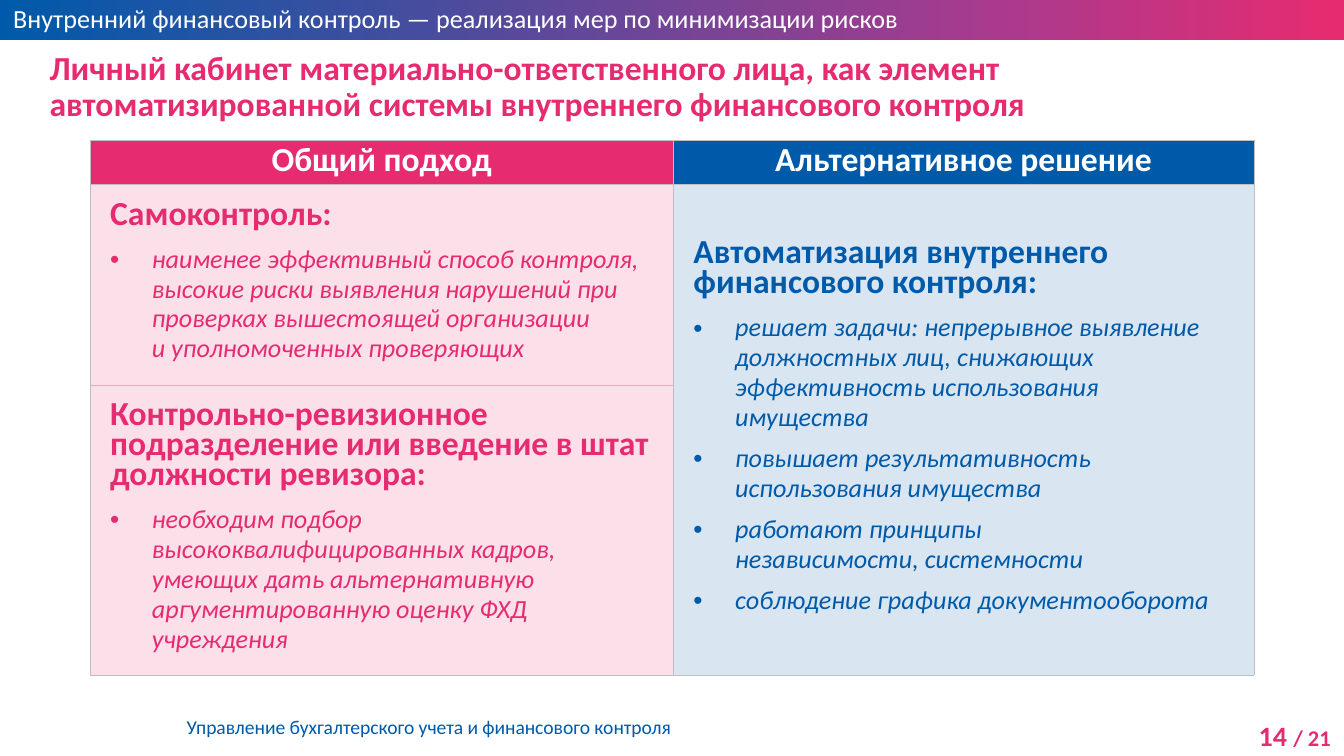
import copy

import lxml.etree
import pptx
import pptx.dml.color
import pptx.enum.shapes
import pptx.enum.text
import pptx.oxml
import pptx.oxml.ns
import pptx.util

Inches = pptx.util.Inches
Pt = pptx.util.Pt
qn = pptx.oxml.ns.qn
ALIGN = pptx.enum.text.PP_ALIGN
PINK, BLUE, WHITE, GREY = "E72B70", "005AAA", "FFFFFF", "BFBFBF"


def color(value):
    return pptx.dml.color.RGBColor.from_string(value)


def format_runs(paragraph, size, value, bold=False, italic=False):
    for run in paragraph.runs:
        run.font.name = "Calibri"
        run.font.size = Pt(size)
        run.font.bold = bold
        run.font.italic = italic
        run.font.color.rgb = color(value)


presentation = pptx.Presentation()
presentation.slide_width = Inches(10)
presentation.slide_height = Inches(10) * 9 // 16
slide = presentation.slides.add_slide(presentation.slide_layouts[6])

# Header band
band = slide.shapes.add_shape(
    pptx.enum.shapes.MSO_SHAPE.RECTANGLE, 0, 0, Inches(10), Inches(0.3))
band.shadow.inherit = False
band.line.fill.background()
band.fill.gradient()
band.fill.gradient_angle = 0
stop_list = band._element.spPr.find(".//" + qn("a:gsLst"))
stop_list.append(copy.deepcopy(stop_list[-1]))
for stop, (position, value) in zip(
        band.fill.gradient_stops, [(0, BLUE), (0.75, "AB3A8D"), (1, PINK)]):
    stop.position = position
    stop.color.rgb = color(value)

# Page number
page_box = slide.shapes.add_textbox(Inches(9.1), Inches(5.3), Inches(0.9), Inches(0.35))
page_box.text_frame.word_wrap = True
paragraph = page_box.text_frame.paragraphs[0]
paragraph.alignment = ALIGN.RIGHT
for text in ("14 ", "/ 21"):
    paragraph.add_run().text = text
format_runs(paragraph, 12, PINK, bold=True)
paragraph.runs[0].font.size = Pt(15)

# Text boxes: left, top, width, height, text, size, color, bold, wrap
text_boxes = [
    (1.29, 5.27, 3.84, 0.28, "Управление бухгалтерского учета и финансового контроля",
     10.5, BLUE, False, False),
    (0, -0.03, 10, 0.34,
     "Внутренний финансовый контроль — реализация мер по минимизации рисков",
     14, WHITE, False, True),
    (0.27, 0.33, 9.45, 0.71,
     "Личный кабинет материально-ответственного лица, как элемент "
     "автоматизированной системы внутреннего финансового контроля",
     18, PINK, True, True),
]
for left, top, width, height, text, size, value, bold, wrap in text_boxes:
    text_box = slide.shapes.add_textbox(
        Inches(left), Inches(top), Inches(width), Inches(height))
    text_box.text_frame.word_wrap = wrap
    text_box.text_frame.text = text
    format_runs(text_box.text_frame.paragraphs[0], size, value, bold)
title = text_box
title.text_frame.margin_right = Inches(0.6)
title.text_frame.paragraphs[0].line_spacing = 0.9

# Comparison table
table = slide.shapes.add_table(
    3, 2, Inches(0.67), Inches(1.04), Inches(8.66), Inches(3.98)).table
for column, width in zip(table.columns, (4.34, 4.32)):
    column.width = Inches(width)
for row, height in zip(table.rows, (0.33, 1.49, 2.16)):
    row.height = Inches(height)
table.cell(1, 1).merge(table.cell(2, 1))

column_colors = (PINK, BLUE)
for row_index in range(3):
    for column_index, value in enumerate(column_colors):
        cell = table.cell(row_index, column_index)
        cell.fill.solid()
        cell.fill.fore_color.rgb = color(value)
        properties = cell._tc.get_or_add_tcPr()
        if row_index > 0:
            fill_color = properties.find(".//" + qn("a:srgbClr"))
            lxml.etree.SubElement(fill_color, qn("a:alpha"), val="15000")
        for index, side in enumerate(("lnL", "lnR", "lnT", "lnB")):
            border = lxml.etree.Element(qn("a:" + side), w=str(Pt(0.25)))
            solid = lxml.etree.SubElement(border, qn("a:solidFill"))
            lxml.etree.SubElement(solid, qn("a:srgbClr"), val=GREY)
            properties.insert(index, border)

for column_index, text in enumerate(("Общий подход", "Альтернативное решение")):
    cell = table.cell(0, column_index)
    cell.margin_left = cell.margin_right = Inches(0.07)
    cell.margin_top = cell.margin_bottom = 0
    cell.text_frame.text = text
    paragraph = cell.text_frame.paragraphs[0]
    paragraph.alignment = ALIGN.CENTER
    format_runs(paragraph, 18, WHITE, bold=True)

# Body cells: row, column, heading, bullets
body_cells = [
    (1, 0, "Самоконтроль:", [
        "наименее эффективный способ контроля, высокие риски выявления нарушений при "
        "проверках вышестоящей организации\nи уполномоченных проверяющих"]),
    (1, 1, "Автоматизация внутреннего финансового контроля:", [
        "решает задачи: непрерывное выявление должностных лиц, снижающих "
        "эффективность использования имущества",
        "повышает результативность\nиспользования имущества",
        "работают принципы\nнезависимости, системности",
        "соблюдение графика документооборота"]),
    (2, 0, "Контрольно-ревизионное подразделение или введение в штат должности ревизора:", [
        "необходим подбор высококвалифицированных кадров, умеющих дать альтернативную "
        "аргументированную оценку ФХД учреждения"]),
]
for row_index, column_index, heading, bullets in body_cells:
    cell = table.cell(row_index, column_index)
    value = column_colors[column_index]
    cell.vertical_anchor = pptx.enum.text.MSO_ANCHOR.MIDDLE
    cell.margin_left = cell.margin_right = Inches(0.15)
    cell.margin_top = cell.margin_bottom = Inches(0.15)
    paragraph = cell.text_frame.paragraphs[0]
    paragraph.text = heading
    paragraph.line_spacing = Pt(16)
    format_runs(paragraph, 18, value, bold=True)
    for bullet in bullets:
        paragraph = cell.text_frame.add_paragraph()
        paragraph.text = bullet
        paragraph.line_spacing = Pt(16)
        paragraph.space_before = Pt(6)
        properties = paragraph._p.get_or_add_pPr()
        properties.set("marL", str(Inches(0.31)))
        properties.set("indent", str(-Inches(0.31)))
        lxml.etree.SubElement(properties, qn("a:buFont"), typeface="Arial")
        lxml.etree.SubElement(properties, qn("a:buChar"), char="•")
        format_runs(paragraph, 14, value, italic=True)

presentation.save("out.pptx")
